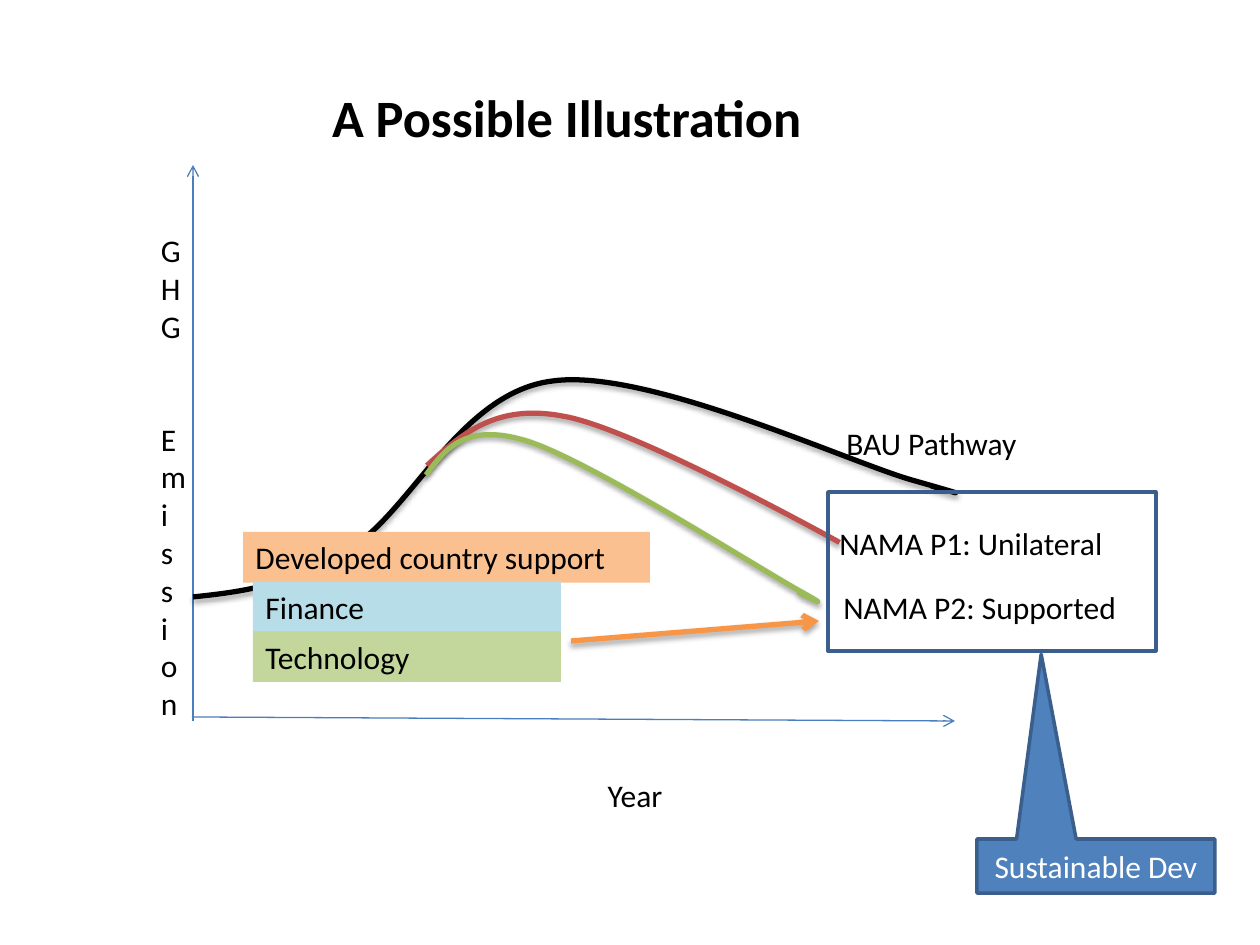
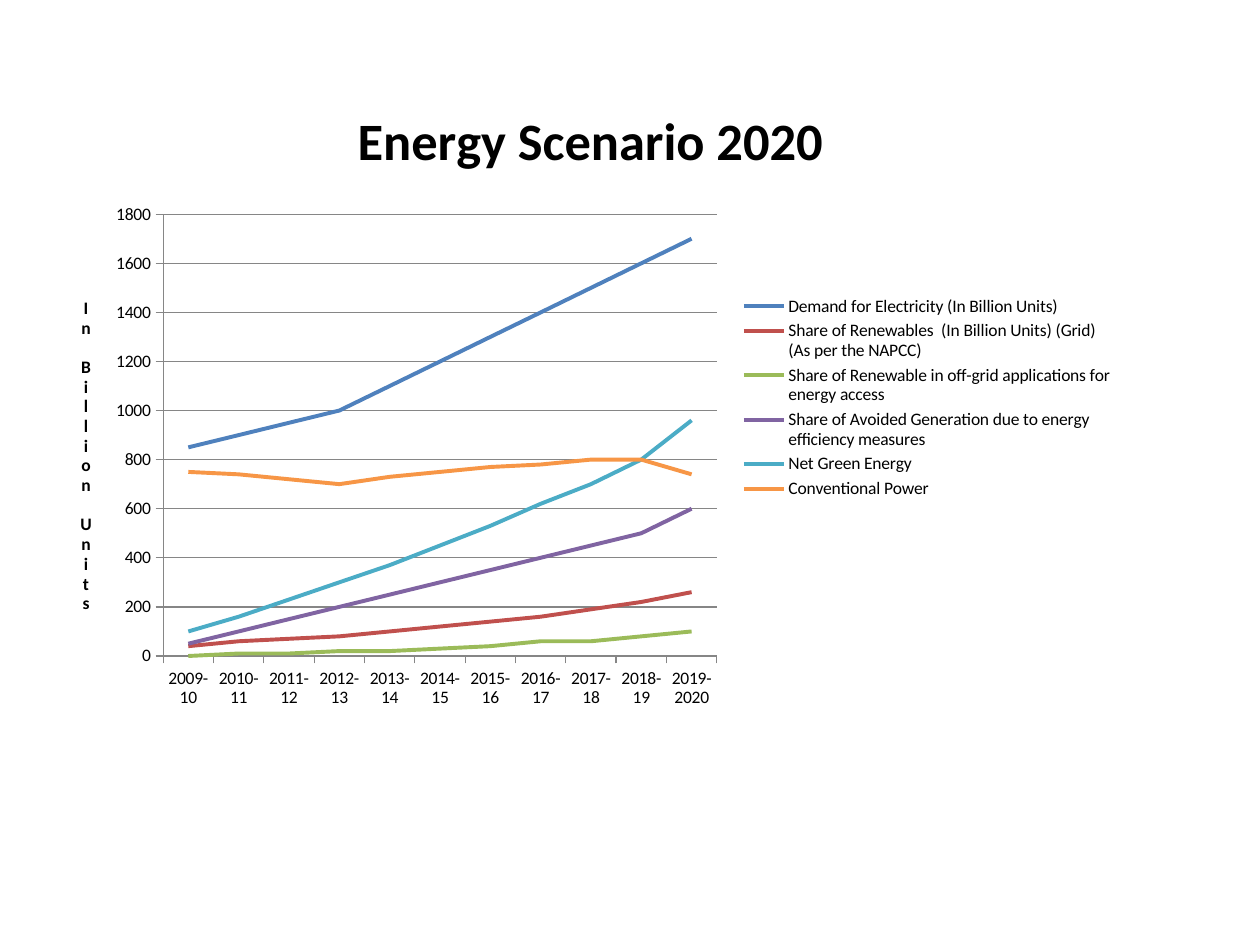
from collections import namedtuple

from lxml import etree
from pptx import Presentation, util as u
from pptx.chart.data import CategoryChartData
from pptx.dml.color import RGBColor
from pptx.enum import chart as ch, shapes, text
from pptx.oxml import parse_xml
from pptx.oxml.ns import nsdecls, qn

PX = 914400 / 126
FONT = "Calibri"
COLORS = {
    "text": "000000", "white": "FFFFFF", "axis": "4B7EBC", "frame": "3A5F8C",
    "grid": "868686", "blue": "4F81BD", "red": "C0504D", "green": "9BBB59",
    "purple": "8064A2", "teal": "4BACC6", "orange": "F79646",
    "support": "FAC090", "finance": "B7DEE8", "technology": "C3D69B",
}
TITLE_SIZE, BODY_SIZE, CHART_SIZE = 30, 18, 10

Box = namedtuple("Box", "x y w h")

# Each pathway: colour, rotation, start point, then three points per Bézier piece.
PATHWAYS = [
    ("text", 0, (0, 432), [
        (48, 427), (97, 421), (156, 384),
        (217, 349), (267, 227), (360, 216),
        (455, 203), (659, 299), (722, 316),
        (785, 334), (762, 328), (738, 321)]),
    ("red", 2.9, (234, 311), [
        (266, 279), (299, 245), (368, 255),
        (438, 263), (650, 367), (650, 367)]),
    ("green", 0, (233, 310), [
        (252, 284), (272, 257), (334, 276),
        (395, 295), (559, 399), (605, 425),
        (650, 450), (605, 427), (605, 427)]),
]

YEARS = ["2009-10", "2010-11", "2011-12", "2012-13", "2013-14", "2014-15",
         "2015-16", "2016-17", "2017-18", "2018-19", "2019-2020"]
ENERGY = [
    ("Demand for Electricity (In Billion Units)", "blue",
     [850, 900, 950, 1000, 1100, 1200, 1300, 1400, 1500, 1600, 1700]),
    ("Share of Renewables  (In Billion Units) (Grid) (As per the NAPCC)", "red",
     [40, 60, 70, 80, 100, 120, 140, 160, 190, 220, 260]),
    ("Share of Renewable in off-grid applications for energy access", "green",
     [0, 10, 10, 20, 20, 30, 40, 60, 60, 80, 100]),
    ("Share of Avoided Generation due to energy efficiency measures", "purple",
     [50, 100, 150, 200, 250, 300, 350, 400, 450, 500, 600]),
    ("Net Green Energy", "teal",
     [100, 160, 230, 300, 370, 450, 530, 620, 700, 800, 960]),
    ("Conventional Power", "orange",
     [750, 740, 720, 700, 730, 750, 770, 780, 800, 800, 740]),
]


def px(*lengths):
    return [round(length * PX) for length in lengths]


def rgb(name):
    return RGBColor.from_string(COLORS[name])


def style_font(font, size, color="text", bold=False):
    font.name, font.size, font.bold = FONT, u.Pt(size), bold
    font.color.rgb = rgb(color)


def write(paragraph, words, size=BODY_SIZE, color="text", bold=False, centred=False):
    paragraph.alignment = text.PP_ALIGN.CENTER if centred else text.PP_ALIGN.LEFT
    run = paragraph.add_run()
    run.text = words
    style_font(run.font, size, color, bold)


def set_line(line, color, width):
    line.color.rgb = rgb(color)
    line.width = u.Pt(width)


def set_effects(item, shadow):
    """Give the item a soft shadow below it, or no shadow at all."""
    effects = etree.SubElement(item._element.spPr, qn("a:effectLst"))
    if shadow:
        outer = etree.SubElement(effects, qn("a:outerShdw"), blurRad="39370",
                                 dist="22860", dir="5400000", rotWithShape="0")
        black = etree.SubElement(outer, qn("a:srgbClr"), val=COLORS["text"])
        etree.SubElement(black, qn("a:alpha"), val="35000")


def add_label(slide, box, words, **style):
    frame = slide.shapes.add_textbox(*px(*box)).text_frame
    frame.word_wrap = True
    write(frame.paragraphs[0], words, **style)
    return frame


def add_panel(slide, box, fill=None, line=None, kind=shapes.MSO_SHAPE.RECTANGLE):
    panel = slide.shapes.add_shape(kind, *px(*box))
    panel.shadow.inherit = False
    if fill:
        panel.fill.solid()
        panel.fill.fore_color.rgb = rgb(fill)
    else:
        panel.fill.background()
    if line:
        set_line(panel.line, line, 2)
    else:
        panel.line.fill.background()
    return panel


def add_arrow(slide, start, end, color, width, shadow=False):
    arrow = slide.shapes.add_connector(shapes.MSO_CONNECTOR.STRAIGHT, *px(*start, *end))
    set_line(arrow.line, color, width)
    etree.SubElement(arrow.line._get_or_add_ln(), qn("a:tailEnd"), type="arrow")
    set_effects(arrow, shadow)


def curve_segments(freeform):
    """Turn every three straight segments into one cubic Bézier piece."""
    segments = list(freeform._element.iter(qn("a:lnTo")))
    for first in range(0, len(segments), 3):
        curve = etree.Element(qn("a:cubicBezTo"))
        segments[first].addprevious(curve)
        for segment in segments[first:first + 3]:
            curve.append(segment[0])
            segment.getparent().remove(segment)


def add_axes(slide, box):
    bottom = box.y + box.h
    add_arrow(slide, (box.x - 1, bottom - 4), (box.x + box.w, bottom), "axis", 0.75)
    add_arrow(slide, (box.x, bottom), (box.x, box.y), "axis", 0.75)
    add_label(slide, Box(box.x + 318, bottom + 49, 248, 51), "Year", centred=True)

    # Narrower than two letters, so that every letter takes its own line.
    column = add_label(slide, Box(box.x - 39, box.y + 59, 20, 471), "GHG")
    (column.margin_left, column.margin_top,
     column.margin_right, column.margin_bottom) = px(7, 7, 1, 6)
    emission = column.add_paragraph()
    emission.space_before = u.Pt(43)
    write(emission, "Emission")


def add_pathways(slide, box):
    for color, rotation, start, points in PATHWAYS:
        first, *rest = [px(box.x + x, box.y + y) for x, y in [start, *points]]
        builder = slide.shapes.build_freeform(*first)
        builder.add_line_segments(rest, close=False)
        pathway = builder.convert_to_shape()
        curve_segments(pathway)
        pathway.rotation = rotation
        pathway.fill.background()
        set_line(pathway.line, color, 3)
        set_effects(pathway, shadow=True)


def add_nama(slide, box):
    """Place the frame with both NAMA labels, the BAU label and the callout."""
    for dx, dy, words in [(-1, 26, "NAMA P1: Unilateral"),
                          (3, 90, "NAMA P2: Supported")]:
        add_label(slide, Box(box.x + dx, box.y + dy, 372, 51), words)
    add_panel(slide, box, line="frame")
    add_label(slide, Box(box.x + 6, box.y - 74, 372, 51), "BAU Pathway")

    callout = add_panel(slide, Box(box.x + 149, box.y + 347, 238, 54), "blue", "frame",
                        shapes.MSO_SHAPE.RECTANGULAR_CALLOUT)
    callout.adjustments[0], callout.adjustments[1] = -0.23, -3.92
    frame = callout.text_frame
    frame.vertical_anchor = text.MSO_ANCHOR.MIDDLE
    write(frame.paragraphs[0], "Sustainable Dev", color="white", centred=True)


def add_support(slide, box):
    row = box.h / 3
    for index, (words, fill, indent, width) in enumerate([
            ("Developed country support", "support", 0, box.w),
            ("Finance", "finance", 10, 308),
            ("Technology", "technology", 10, 308)]):
        panel = add_panel(slide, Box(box.x + indent, box.y + index * row, width, row + 1),
                          fill)
        panel.text_frame.vertical_anchor = text.MSO_ANCHOR.TOP
        write(panel.text_frame.paragraphs[0], words)
    add_arrow(slide, (box.x + 328, box.y + 109), (box.x + 576, box.y + 89),
              "orange", 3, shadow=True)


def build_illustration(slide):
    title = add_label(slide, Box(0, 37, 1134, 158), "A Possible Illustration",
                      size=TITLE_SIZE, bold=True, centred=True)
    title.vertical_anchor = text.MSO_ANCHOR.MIDDLE
    plot = Box(193, 165, 762, 556)
    add_axes(slide, plot)
    add_pathways(slide, plot)
    add_nama(slide, Box(828, 492, 328, 159))
    add_support(slide, Box(243, 532, 407, 149))


def place_plot(chart, box, plot):
    """Fix the inner plot area, given in px on the slide."""
    shares = {"x": (plot.x - box.x) / box.w, "y": (plot.y - box.y) / box.h,
              "w": plot.w / box.w, "h": plot.h / box.h}
    modes = "".join(f'<c:{side}Mode val="edge"/>' for side in "xy")
    sizes = "".join(f'<c:{side} val="{share:.3f}"/>' for side, share in shares.items())
    area = chart._chartSpace.chart.plotArea
    for layout in area.findall(qn("c:layout")):
        area.remove(layout)
    area.insert(0, parse_xml(
        f'<c:layout {nsdecls("c")}><c:manualLayout><c:layoutTarget val="inner"/>'
        f'{modes}{sizes}</c:manualLayout></c:layout>'))


def build_energy_chart(slide, box):
    data = CategoryChartData()
    data.categories = YEARS
    for name, _, values in ENERGY:
        data.add_series(name, values)
    chart = slide.shapes.add_chart(ch.XL_CHART_TYPE.LINE, *px(*box), data).chart
    style_font(chart.font, CHART_SIZE)

    chart.has_title = True
    write(chart.chart_title.text_frame.paragraphs[0], "Energy Scenario 2020",
          TITLE_SIZE, bold=True, centred=True)
    chart.chart_title.include_in_layout = False
    chart.has_legend = True
    chart.legend.position = ch.XL_LEGEND_POSITION.RIGHT
    chart.legend.include_in_layout = False

    chart.plots[0].vary_by_categories = False
    for series, (_, color, _) in zip(chart.plots[0].series, ENERGY):
        series.smooth = False
        series.marker.style = ch.XL_MARKER_STYLE.NONE
        set_line(series.format.line, color, 2.25)

    units = chart.value_axis
    for axis in (chart.category_axis, units):
        axis.major_tick_mark = ch.XL_TICK_MARK.OUTSIDE
        set_line(axis.format.line, "grid", 0.75)
    units.minimum_scale, units.maximum_scale, units.major_unit = 0, 1800, 200
    units.has_major_gridlines = True
    set_line(units.major_gridlines.format.line, "grid", 0.75)
    units.has_title = True
    caption = units.axis_title.text_frame
    write(caption.paragraphs[0], "In Billion Units", CHART_SIZE, bold=True, centred=True)
    direction = caption._txBody.find(qn("a:bodyPr"))
    direction.set("rot", "0")
    direction.set("vert", "wordArtVert")
    place_plot(chart, box, Box(163, 214, 554, 442))


def main():
    deck = Presentation()
    deck.slide_width, deck.slide_height = px(1260, 945)
    blank = deck.slide_layouts[6]
    build_illustration(deck.slides.add_slide(blank))
    build_energy_chart(deck.slides.add_slide(blank), Box(55, 75, 1071, 645))
    deck.save("out.pptx")


if __name__ == "__main__":
    main()
